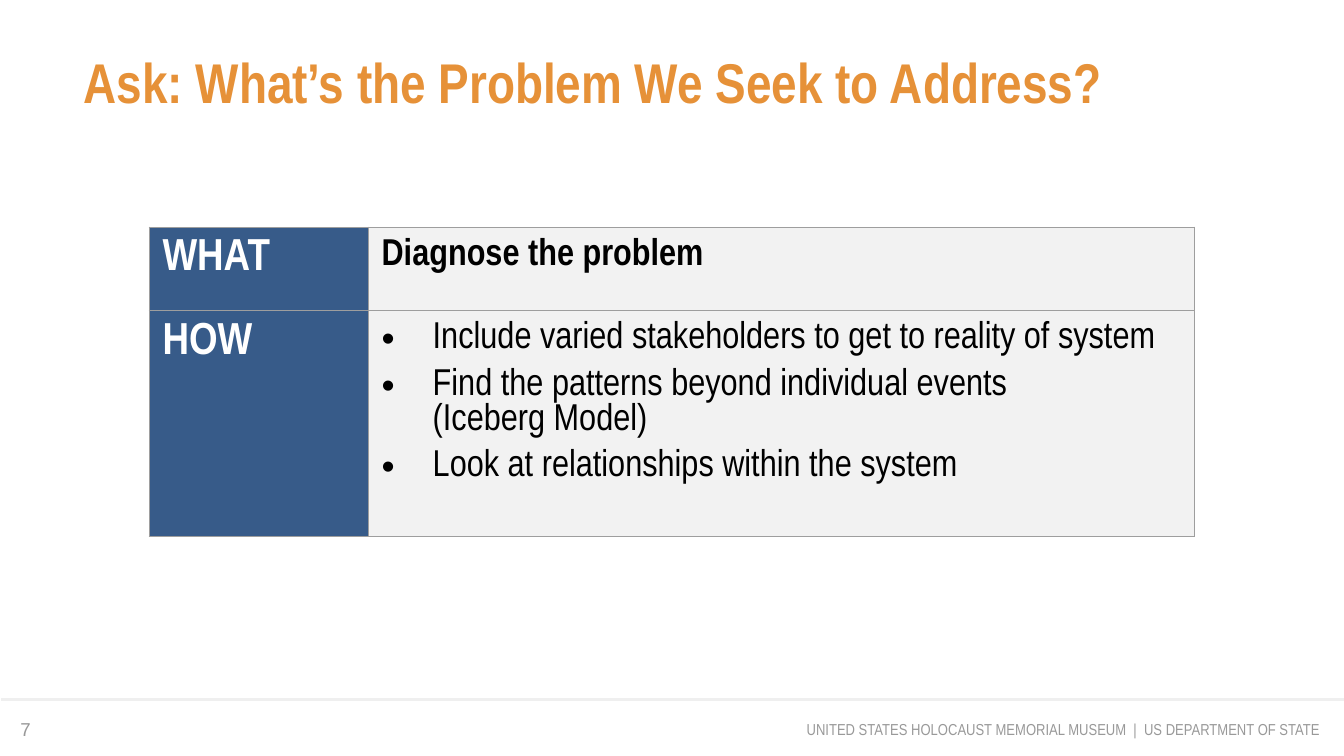
import pptx
import pptx.dml.color
import pptx.enum.shapes
import pptx.enum.text
import pptx.oxml.ns
import pptx.util
from lxml import etree

WIDTH = pptx.util.Inches(10)
HEIGHT = WIDTH * 9 // 16
NARROW = "Arial Narrow"
ANCHOR = pptx.enum.text.MSO_ANCHOR
ALIGN = pptx.enum.text.PP_ALIGN


def col(percent):
    return round(WIDTH * percent / 100)


def row(percent):
    return round(HEIGHT * percent / 100)


def color(value):
    return pptx.dml.color.RGBColor.from_string(value)


def add_xml(parent, tag, **attributes):
    return etree.SubElement(parent, pptx.oxml.ns.qn(tag), **attributes)


def set_font(p, size, value, bold=False, name=NARROW):
    p.font.size = pptx.util.Pt(size)
    p.font.name = name
    p.font.bold = bold
    p.font.color.rgb = color(value)


def set_margins(box, x, y):
    box.margin_left = box.margin_right = pptx.util.Inches(x)
    box.margin_top = box.margin_bottom = pptx.util.Inches(y)


def add_title(s, text):
    sp = s.shapes.title
    sp.left, sp.top, sp.width, sp.height = col(6.23), row(6.26), col(87.5), row(9.6)
    tf = sp.text_frame
    tf.text = text
    tf.vertical_anchor = ANCHOR.TOP
    set_margins(tf, 0, 0)
    p = tf.paragraphs[0]
    p.alignment = ALIGN.LEFT
    set_font(p, 30, "E69138", bold=True)


def add_label(s, text, x, y, w, h, size, name, anchor, align):
    tf = s.shapes.add_textbox(col(x), row(y), col(w), row(h)).text_frame
    tf.word_wrap = True
    tf.vertical_anchor = anchor
    set_margins(tf, 0.1, 0.1)
    p = tf.paragraphs[0]
    p.text = text
    p.alignment = align
    set_font(p, size, "999999", name=name)


def add_rule(s, y):
    line = s.shapes.add_connector(
        pptx.enum.shapes.MSO_CONNECTOR.STRAIGHT, col(0.1), row(y), col(100), row(y))
    line.line.color.rgb = color("EFEFEF")
    line.line.width = pptx.util.Pt(1.5)
    add_xml(line._element.spPr, "a:effectLst")


def set_borders(cell, value, width):
    tcPr = cell._tc.get_or_add_tcPr()
    for side in ("a:lnL", "a:lnR", "a:lnT", "a:lnB"):
        ln = add_xml(tcPr, side, w=str(pptx.util.Pt(width)))
        add_xml(add_xml(ln, "a:solidFill"), "a:srgbClr", val=value)


def set_bullet(p):
    indent = pptx.util.Inches(0.38)
    pPr = p._p.get_or_add_pPr()
    pPr.set("marL", str(indent))
    pPr.set("indent", str(-indent))
    add_xml(add_xml(pPr, "a:buClr"), "a:srgbClr", val="000000")
    add_xml(pPr, "a:buFont", typeface="Arial")
    add_xml(pPr, "a:buChar", char="•")
    p.space_after = pptx.util.Pt(6)


def fill_cell(cell, lines, fill, size, value, bold=True, bullets=False):
    set_margins(cell, 0.1, 0.08)
    set_borders(cell, "9E9E9E", 0.75)
    cell.fill.solid()
    cell.fill.fore_color.rgb = color(fill)
    tf = cell.text_frame
    tf.text = "\n".join(lines)
    for p in tf.paragraphs:
        if bullets:
            set_bullet(p)
        set_font(p, size, value, bold)


def add_steps(s, steps):
    table = s.shapes.add_table(
        len(steps), 2, col(11.1), row(30.07), col(77.8), row(40.9)).table
    table.first_row = table.horz_banding = False
    for column, width in zip(table.columns, (16.3, 61.5)):
        column.width = col(width)
    for i, (height, heading, lines, bullets) in enumerate(steps):
        table.rows[i].height = row(height)
        fill_cell(table.cell(i, 0), [heading], "375B89", 24, "FFFFFF")
        fill_cell(table.cell(i, 1), lines, "F2F2F2", 20, "000000", not bullets, bullets)


def main():
    prs = pptx.Presentation()
    prs.slide_width, prs.slide_height = WIDTH, HEIGHT
    s = prs.slides.add_slide(prs.slide_layouts.get_by_name("Title Only"))
    add_rule(s, 92.53)
    add_label(s, "UNITED STATES HOLOCAUST MEMORIAL MUSEUM  |  US DEPARTMENT OF STATE",
              51.8, 92.65, 47.4, 7.65, 8.5, NARROW, ANCHOR.MIDDLE, ALIGN.RIGHT)
    add_title(s, "Ask: What’s the Problem We Seek to Address?")
    add_label(s, "7", 0.53, 91.75, 7.8, 7.65, 10, "Arial", ANCHOR.BOTTOM, ALIGN.LEFT)
    add_steps(s, [
        (11.02, "WHAT", ["Diagnose the problem"], False),
        (29.88, "HOW", [
            "Include varied stakeholders to get to reality of system",
            "Find the patterns beyond individual events \v(Iceberg Model)",
            "Look at relationships within the system",
        ], True),
    ])
    prs.save("out.pptx")


if __name__ == "__main__":
    main()
